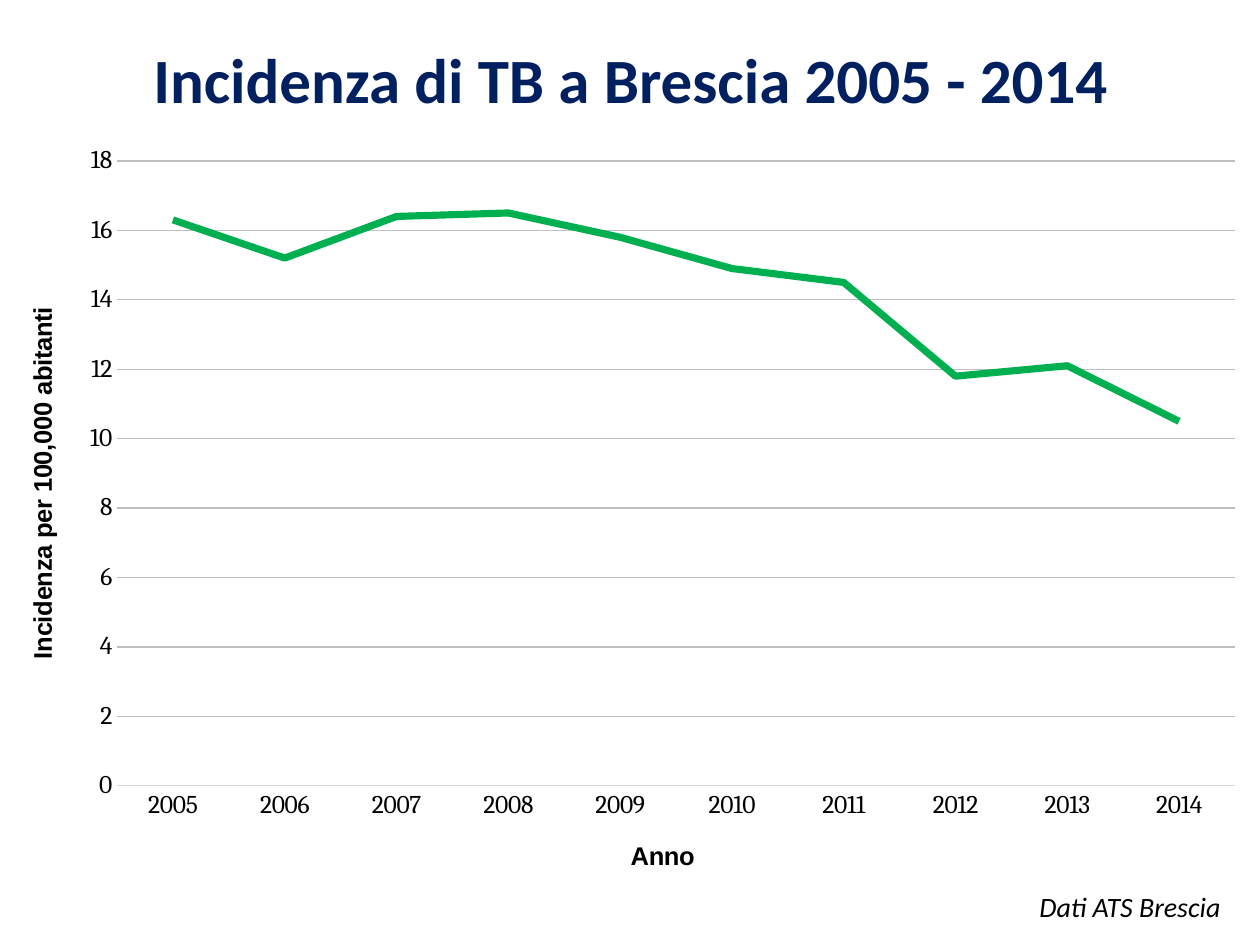
from pptx import Presentation, util as u
from pptx.chart.data import CategoryChartData
from pptx.dml.color import RGBColor
from pptx.enum import chart as ch, text as tx
from pptx.oxml import parse_xml
from pptx.oxml.ns import nsdecls

PX = 914400 // 126
HUES = {"black": "000000", "navy": "002060", "green": "00B050",
        "grid": "BFBFBF", "axis": "D9D9D9"}
YEARS = [str(y) for y in range(2005, 2015)]
RATES = [16.3, 15.2, 16.4, 16.5, 15.8, 14.9, 14.5, 11.8, 12.1, 10.5]


def hue(name):
    return RGBColor.from_string(HUES[name])


def style(font, size, color="black", face="Calibri", bold=False, italic=False):
    font.size, font.name = u.Pt(size), face
    font.bold, font.italic = bold, italic
    font.color.rgb = hue(color)


def stroke(line, color, width):
    line.color.rgb = hue(color)
    line.width = u.Pt(width)


def write(slide, box, words, align=None, anchor=None, wrap=True,
          spacing=None, **form):
    frame = slide.shapes.add_textbox(*(n * PX for n in box)).text_frame
    frame.word_wrap = wrap
    frame.vertical_anchor = anchor
    para = frame.paragraphs[0]
    para.alignment, para.line_spacing = align, spacing
    run = para.add_run()
    run.text = words
    style(run.font, **form)


def label(axis, words):
    run = axis.axis_title.text_frame.paragraphs[0].add_run()
    run.text = words
    style(run.font, 14.6, face="Arial", bold=True)


def place(chart, box, plot):
    """Fix the inner plot area; plot is in px relative to the chart box."""
    parts = zip("xywh", plot, (box[2], box[3]) * 2)
    sizes = "".join(f'<c:{k} val="{n / full:.4f}"/>' for k, n, full in parts)
    area = chart.element.chart.plotArea
    for old in area.findall("{*}layout"):
        area.remove(old)
    area.insert(0, parse_xml(
        f'<c:layout {nsdecls("c")}><c:manualLayout>'
        '<c:layoutTarget val="inner"/><c:xMode val="edge"/>'
        f'<c:yMode val="edge"/>{sizes}</c:manualLayout></c:layout>'))


def trend(slide, box):
    data = CategoryChartData()
    data.categories = YEARS
    data.add_series("Series 1", RATES)
    chart = slide.shapes.add_chart(
        ch.XL_CHART_TYPE.LINE, *(n * PX for n in box), data).chart
    chart.has_legend = chart.has_title = False
    style(chart.font, 14.6, face="Cambria")
    place(chart, box, (117, 30, 1118, 625))

    # Line
    chart.plots[0].vary_by_categories = False
    line = chart.plots[0].series[0]
    line.smooth = False
    line.marker.style = ch.XL_MARKER_STYLE.NONE
    stroke(line.format.line, "green", 4.09)

    # Axes
    years, rates = chart.category_axis, chart.value_axis
    for axis, words in ((years, "Anno"),
                        (rates, "Incidenza per 100,000 abitanti")):
        axis.major_tick_mark = axis.minor_tick_mark = ch.XL_TICK_MARK.NONE
        label(axis, words)
    stroke(years.format.line, "axis", 0.68)
    rates.minimum_scale, rates.maximum_scale, rates.major_unit = 0, 18, 2
    rates.tick_labels.number_format = "General"
    rates.tick_labels.number_format_is_linked = False
    rates.format.line.fill.background()
    stroke(rates.major_gridlines.format.line, "grid", 0.68)


def main():
    deck = Presentation()
    deck.slide_width, deck.slide_height = 1260 * PX, 945 * PX
    slide = deck.slides.add_slide(deck.slide_layouts[6])

    # Chart, source note, heading
    trend(slide, (0, 131, 1260, 767))
    write(slide, (1027, 883, 209, 47), "Dati ATS Brescia", wrap=False,
          size=16, italic=True)
    write(slide, (64, 5, 1134, 157), "Incidenza di TB a Brescia 2005 - 2014",
          align=tx.PP_ALIGN.CENTER, anchor=tx.MSO_ANCHOR.MIDDLE, spacing=0.9,
          size=36, color="navy", bold=True)
    deck.save("out.pptx")


if __name__ == "__main__":
    main()
